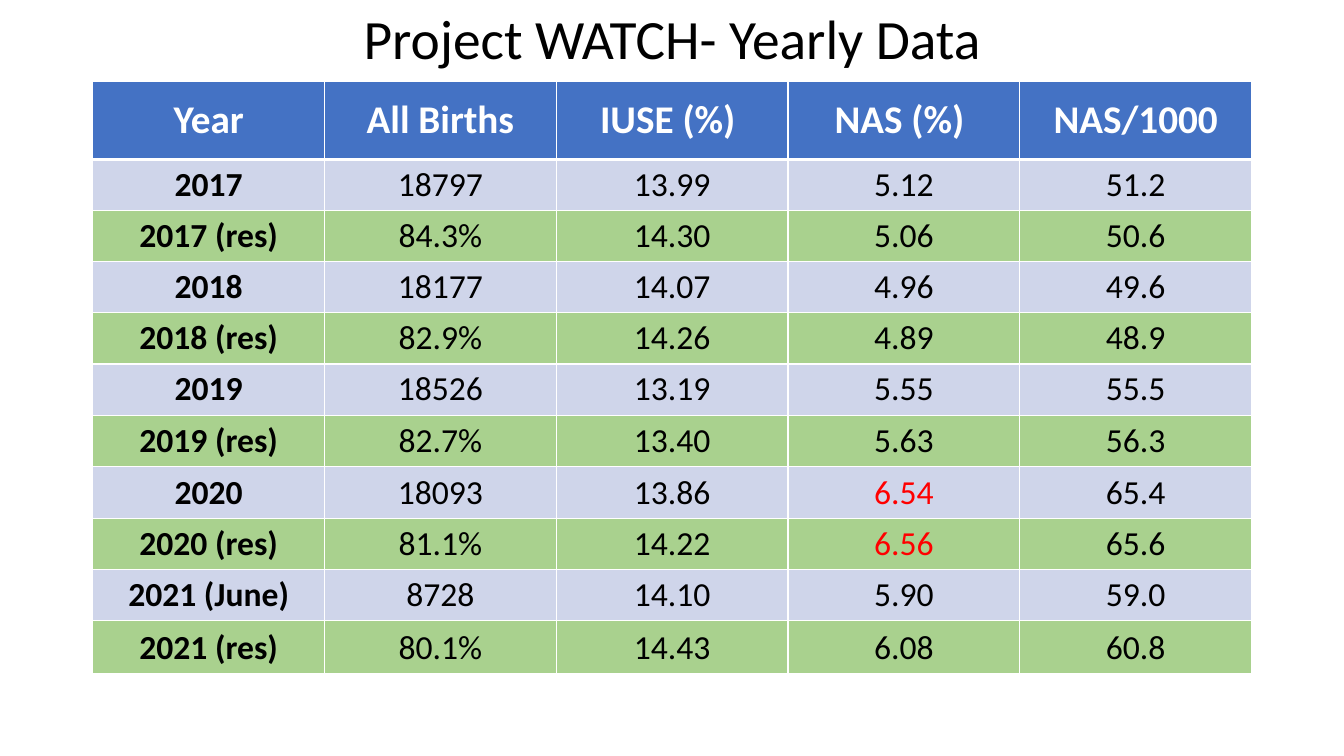
from dataclasses import dataclass

from lxml.etree import SubElement
from pptx import Presentation
from pptx.dml.color import RGBColor
from pptx.enum.text import MSO_ANCHOR as Anchor, MSO_AUTO_SIZE as AutoSize, PP_ALIGN as Align
from pptx.oxml.ns import qn
from pptx.table import _Cell as Cell
from pptx.text.text import _Paragraph as Paragraph
from pptx.util import Cm, Pt

COLORS = {
    "white": "FFFFFF",
    "black": "000000",
    "header": "4472C4",
    "all": "CFD5EA",
    "resident": "A9D18E",
    "alert": "FF0000",
}
LEFT, COLUMN_WIDTH = 2.34, 5.84
HEADINGS = ("Year", "All Births", "IUSE (%) ", "NAS (%) ", "NAS/1000")
ALERTS = {"6.54", "6.56"}


@dataclass(frozen=True)
class YearRow:
    values: tuple[str, ...]
    height: float = 1.28


@dataclass(frozen=True)
class CellStyle:
    fill: str
    color: str
    size: float
    bold: bool
    anchor: Anchor
    top: float = 1
    bottom: float = 1


YEAR_ROWS = (
    YearRow(("2017", "18797", "13.99", "5.12", "51.2")),
    YearRow(("2017 (res)", "84.3%", "14.30", "5.06", "50.6")),
    YearRow(("2018", "18177", "14.07", "4.96", "49.6")),
    YearRow(("2018 (res)", "82.9%", "14.26", "4.89", "48.9")),
    YearRow(("2019", "18526", "13.19", "5.55", "55.5")),
    YearRow(("2019 (res)", "82.7%", "13.40", "5.63", "56.3")),
    YearRow(("2020", "18093", "13.86", "6.54", "65.4"), 1.32),
    YearRow(("2020 (res)", "81.1%", "14.22", "6.56", "65.6")),
    YearRow(("2021 (June)", "8728", "14.10", "5.90", "59.0")),
    YearRow(("2021 (res)", "80.1%", "14.43", "6.08", "60.8"), 1.32),
)
HEADER_ROW = YearRow(HEADINGS, 1.98)
HEADER_STYLE = CellStyle("header", "white", 28, True, Anchor.MIDDLE, bottom=3)


def write_text(para: Paragraph, text: str, size: float, color: str, bold: bool = False) -> None:
    para.alignment = Align.CENTER
    span = para.add_run()
    span.text = text
    formats = {"name": "Calibri", "size": Pt(size), "bold": bold}
    for name, value in formats.items():
        setattr(span.font, name, value)
    span.font.color.rgb = RGBColor.from_string(COLORS[color])


def add_borders(cell: Cell, top: float, bottom: float) -> None:
    properties = cell._tc.get_or_add_tcPr()
    widths = {"a:lnL": 1, "a:lnR": 1, "a:lnT": top, "a:lnB": bottom}
    for tag, width in widths.items():
        line = SubElement(properties, qn(tag), w=str(Pt(width)))
        fill = SubElement(line, qn("a:solidFill"))
        SubElement(fill, qn("a:srgbClr"), val=COLORS["white"])


def draw_cell(cell: Cell, text: str, style: CellStyle) -> None:
    add_borders(cell, style.top, style.bottom)
    cell.fill.solid()
    cell.fill.fore_color.rgb = RGBColor.from_string(COLORS[style.fill])
    cell.vertical_anchor = style.anchor
    write_text(cell.text_frame.paragraphs[0], text, style.size, style.color, style.bold)


def style_for(row: int, column: int, text: str) -> CellStyle:
    if row == 0:
        return HEADER_STYLE
    return CellStyle(
        fill="all" if row % 2 else "resident",
        color="alert" if text in ALERTS else "black",
        size=24,
        bold=column == 0,
        anchor=Anchor.BOTTOM,
        top=3 if row == 1 else 1,
    )


def main() -> None:
    deck = Presentation()
    deck.slide_width, deck.slide_height = Cm(33.87), Cm(19.05)
    page = deck.slides.add_slide(deck.slide_layouts[5])
    table_width = COLUMN_WIDTH * len(HEADINGS)

    title = page.shapes.title
    place = {"left": LEFT, "top": 0.33, "width": table_width, "height": 1.42}
    for name, value in place.items():
        setattr(title, name, Cm(value))
    frame = title.text_frame
    formats = {"word_wrap": True, "auto_size": AutoSize.NONE, "vertical_anchor": Anchor.MIDDLE}
    for name, value in formats.items():
        setattr(frame, name, value)
    frame.paragraphs[0].line_spacing = 0.9
    write_text(frame.paragraphs[0], "Project WATCH- Yearly Data", 39.6, "black")

    rows = (HEADER_ROW, *YEAR_ROWS)
    table_height = sum(row.height for row in rows)
    table = page.shapes.add_table(
        len(rows), len(HEADINGS), Cm(LEFT), Cm(2.04), Cm(table_width), Cm(table_height)
    ).table
    for column in table.columns:
        column.width = Cm(COLUMN_WIDTH)
    for row, record in enumerate(rows):
        table.rows[row].height = Cm(record.height)
        for column, text in enumerate(record.values):
            draw_cell(table.cell(row, column), text, style_for(row, column, text))

    deck.save("out.pptx")


if __name__ == "__main__":
    main()
